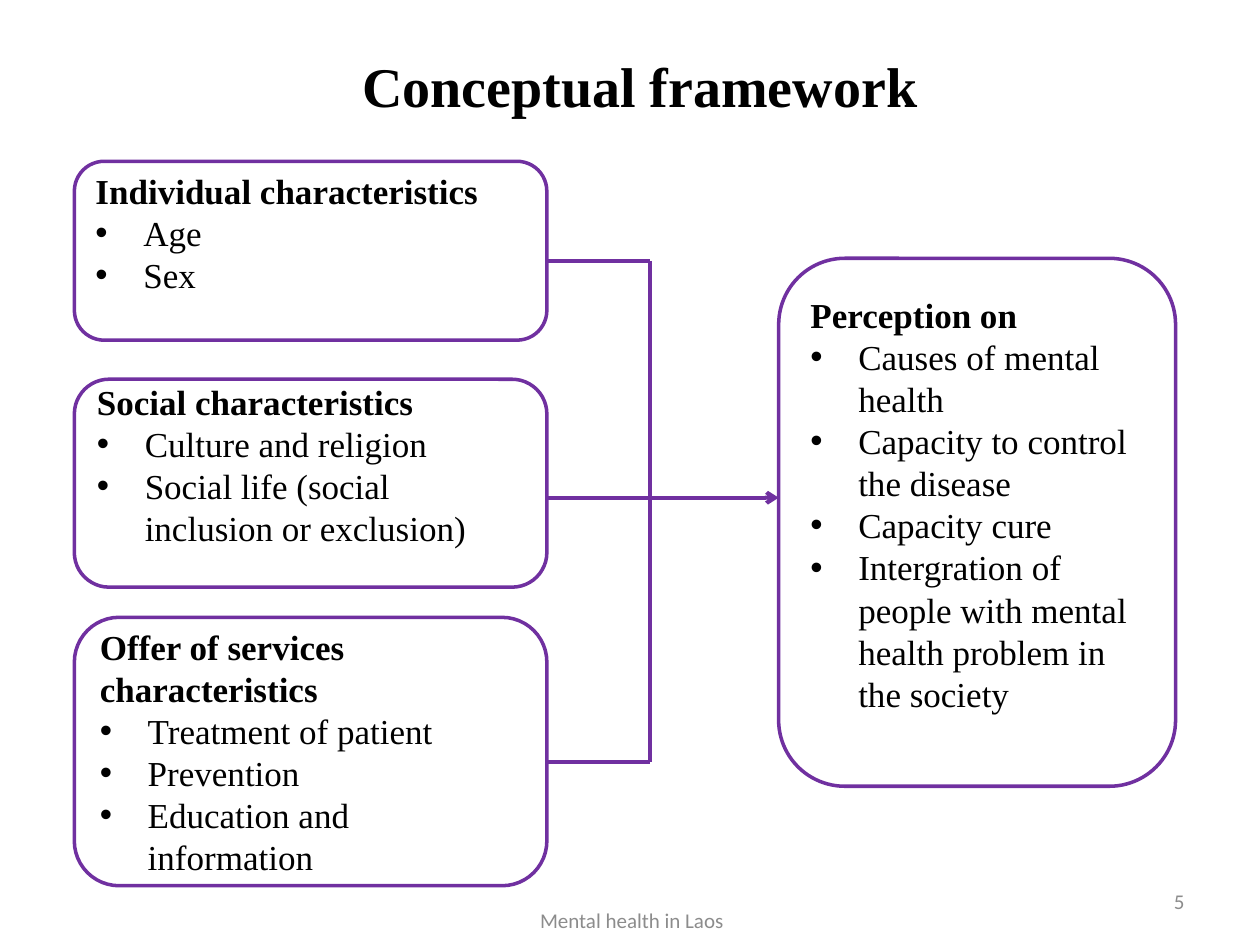
from dataclasses import dataclass

from lxml import etree
from pptx import Presentation
from pptx.dml.color import RGBColor
from pptx.enum.shapes import MSO_CONNECTOR, MSO_SHAPE
from pptx.enum.text import MSO_ANCHOR, PP_ALIGN
from pptx.oxml.ns import qn
from pptx.util import Inches, Pt

ROUNDED = MSO_SHAPE.ROUNDED_RECTANGLE
STRAIGHT = MSO_CONNECTOR.STRAIGHT
MIDDLE = MSO_ANCHOR.MIDDLE
LEFT, CENTER, RIGHT = PP_ALIGN.LEFT, PP_ALIGN.CENTER, PP_ALIGN.RIGHT

SLIDE_WIDTH, SLIDE_HEIGHT = Inches(10), Inches(7.5)
COLUMNS, ROWS = 100, 75


@dataclass(frozen=True)
class Theme:
    ink: RGBColor = RGBColor(0x00, 0x00, 0x00)
    muted: RGBColor = RGBColor(0x8C, 0x8C, 0x8C)
    accent: RGBColor = RGBColor(0x70, 0x30, 0xA0)
    body_font: str = "Times New Roman"
    footer_font: str = "Calibri"
    title_size: int = 32
    body_size: int = 20
    footer_size: int = 12
    outline: float = 2
    connector: float = 2.25
    hanging: float = 0.38
    inset: float = 0.05


class FrameworkSlide:
    def __init__(self, slide, theme):
        self.shapes = slide.shapes
        self.theme = theme

    def x(self, columns):
        return round(SLIDE_WIDTH * columns / COLUMNS)

    def y(self, rows):
        return round(SLIDE_HEIGHT * rows / ROWS)

    def area(self, left, top, width, height):
        return self.x(left), self.y(top), self.x(width), self.y(height)

    def style(self, paragraph, font, size, color, bold=False, align=LEFT):
        paragraph.alignment = align
        for run in paragraph.runs:
            run.font.name = font
            run.font.size = Pt(size)
            run.font.bold = bold
            run.font.color.rgb = color

    def label(self, area, text, font, size, color, bold=False, align=CENTER):
        frame = self.shapes.add_textbox(*self.area(*area)).text_frame
        frame.word_wrap = True
        frame.vertical_anchor = MIDDLE
        frame.text = text
        self.style(frame.paragraphs[0], font, size, color, bold, align)

    def title(self, area, text):
        theme = self.theme
        self.label(area, text, theme.body_font, theme.title_size, theme.ink, True)

    def footer(self, area, text, align):
        theme = self.theme
        self.label(area, text, theme.footer_font, theme.footer_size, theme.muted, align=align)

    def bullet(self, paragraph):
        properties = paragraph._p.get_or_add_pPr()
        properties.set("marL", str(Inches(self.theme.hanging)))
        properties.set("indent", str(-Inches(self.theme.hanging)))
        etree.SubElement(properties, qn("a:buFont")).set("typeface", "Arial")
        etree.SubElement(properties, qn("a:buChar")).set("char", "•")

    def factor_box(self, area, heading, items, room_below=0):
        theme = self.theme
        box = self.shapes.add_shape(ROUNDED, *self.area(*area))
        box.shadow.inherit = False
        box.fill.background()
        box.line.color.rgb = theme.accent
        box.line.width = Pt(theme.outline)
        frame = box.text_frame
        frame.word_wrap = True
        frame.vertical_anchor = MIDDLE
        frame.margin_bottom = Inches(theme.inset) + self.y(room_below)
        frame.text = "\n".join([heading, *items])
        for index, paragraph in enumerate(frame.paragraphs):
            self.style(paragraph, theme.body_font, theme.body_size, theme.ink, index == 0)
            if index:
                self.bullet(paragraph)

    def link(self, start, end, arrow=False):
        connector = self.shapes.add_connector(
            STRAIGHT, self.x(start[0]), self.y(start[1]), self.x(end[0]), self.y(end[1])
        )
        connector.line.color.rgb = self.theme.accent
        connector.line.width = Pt(self.theme.connector)
        if arrow:
            outline = connector.line._get_or_add_ln()
            etree.SubElement(outline, qn("a:tailEnd")).set("type", "arrow")
        etree.SubElement(connector._element.spPr, qn("a:effectLst"))


def main():
    presentation = Presentation()
    presentation.slide_width, presentation.slide_height = SLIDE_WIDTH, SLIDE_HEIGHT
    blank = presentation.slide_layouts[6]
    framework = FrameworkSlide(presentation.slides.add_slide(blank), Theme())

    framework.title((5.8, 2.1, 90, 9.3), "Conceptual framework")
    framework.footer((34.3, 71, 31.7, 4), "Mental health in Laos", CENTER)
    framework.footer((71.7, 69.5, 23.3, 4), "5", RIGHT)

    factor_left, factor_width = 5.9, 37.5
    factor_right = factor_left + factor_width
    trunk, outcome_left = 51.6, 61.8
    spare_line = 2.9
    factors = [
        (12.8, 14.2, 20.7, spare_line, "Individual characteristics", ["Age", "Sex"]),
        (30.1, 16.5, 39.5, spare_line, "Social characteristics",
         ["Culture and religion", "Social life (social inclusion or exclusion)"]),
        (49, 21.3, 60.5, 0, "Offer of services characteristics",
         ["Treatment of patient", "Prevention", "Education and information"]),
    ]
    for top, height, branch, room_below, heading, items in factors:
        framework.factor_box((factor_left, top, factor_width, height), heading, items, room_below)
        framework.link((factor_right, branch), (trunk, branch))

    framework.factor_box(
        (outcome_left, 20.5, 31.5, 41.9),
        "Perception on",
        ["Causes of mental health", "Capacity to control the disease", "Capacity cure",
         "Intergration of people with mental health problem in the society"],
        spare_line,
    )
    first, middle, last = (factor[2] for factor in factors)
    framework.link((trunk, first), (trunk, last))
    framework.link((trunk, middle), (outcome_left, middle), arrow=True)

    presentation.save("out.pptx")


if __name__ == "__main__":
    main()
